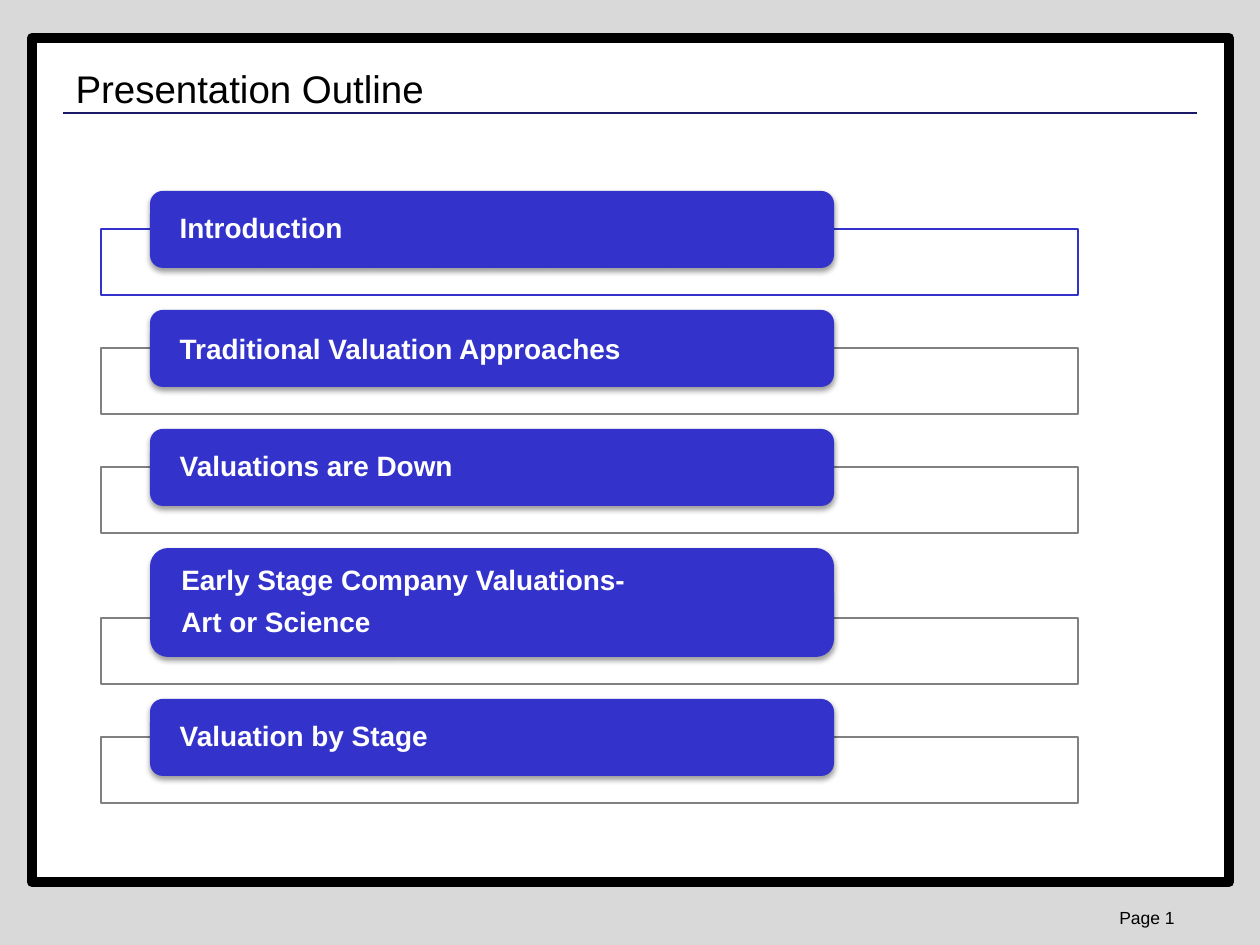
from dataclasses import dataclass

import pptx
import pptx.dml.color
import pptx.enum.shapes
import pptx.enum.text
import pptx.oxml.ns
import pptx.util
from lxml import etree

EMU_PER_PX = 914400 / 126
COLORS = {
    "background": "D9D9D9",
    "paper": "FFFFFF",
    "ink": "000000",
    "rule": "191966",
    "accent": "3333CC",
    "muted": "808080",
}
FONT = "Arial"
MIDDLE = pptx.enum.text.MSO_ANCHOR.MIDDLE
LEFT = pptx.enum.text.PP_ALIGN.LEFT
RIGHT = pptx.enum.text.PP_ALIGN.RIGHT
SHAPES = pptx.enum.shapes.MSO_SHAPE
qn = pptx.oxml.ns.qn

FIRST_TAB_TOP = 191
TAB_LEFT, TAB_WIDTH = 150, 684
OUTLINE_LEFT, OUTLINE_WIDTH, OUTLINE_HEIGHT = 101, 977, 66
OVERLAP = 39
ROW_GAP = 15


@dataclass(frozen=True)
class Topic:
    lines: tuple[str, ...]
    tab_height: int = 77
    outline: str = "muted"
    line_spacing: float = 0.9


TOPICS = (
    Topic(("Introduction",), outline="accent"),
    Topic(("Traditional Valuation Approaches",), line_spacing=1.0),
    Topic(("Valuations are Down",)),
    Topic(("Early Stage Company Valuations-", "Art or Science"), tab_height=109),
    Topic(("Valuation by Stage",)),
)


def px(length: int) -> pptx.util.Emu:
    return pptx.util.Emu(round(length * EMU_PER_PX))


def rgb(name: str) -> pptx.dml.color.RGBColor:
    return pptx.dml.color.RGBColor.from_string(COLORS[name])


def set_attributes(target, values: dict) -> None:
    for name, value in values.items():
        setattr(target, name, value)


def set_font(font, size: int, color: str, bold: bool = False) -> None:
    set_attributes(font, {"name": FONT, "size": pptx.util.Pt(size), "bold": bold})
    font.color.rgb = rgb(color)


def add_box(slide, preset, left: int, top: int, width: int, height: int, fill: str):
    box = slide.shapes.add_shape(preset, px(left), px(top), px(width), px(height))
    box.shadow.inherit = False
    box.fill.solid()
    box.fill.fore_color.rgb = rgb(fill)
    return box


def set_line(line, color: str, width: float) -> None:
    line.color.rgb = rgb(color)
    line.width = pptx.util.Pt(width)


def add_drop_shadow(shape) -> None:
    effects = shape._element.spPr.find(qn("a:effectLst"))
    shadow = etree.SubElement(effects, qn("a:outerShdw"), blurRad="40000",
                              dist="20000", dir="5400000", rotWithShape="0")
    color = etree.SubElement(shadow, qn("a:srgbClr"), val=COLORS["ink"])
    etree.SubElement(color, qn("a:alpha"), val="38000")


def add_topic(slide, topic: Topic, tab_top: int) -> int:
    """Draw one outline row and return the top of the next tab."""
    outline_top = tab_top + topic.tab_height - OVERLAP
    outline = add_box(slide, SHAPES.RECTANGLE, OUTLINE_LEFT, outline_top,
                      OUTLINE_WIDTH, OUTLINE_HEIGHT, "paper")
    set_line(outline.line, topic.outline, 0.75)
    paper = outline._element.spPr.find(f"{qn('a:solidFill')}/{qn('a:srgbClr')}")
    etree.SubElement(paper, qn("a:alpha"), val="90000")

    tab = add_box(slide, SHAPES.ROUNDED_RECTANGLE, TAB_LEFT, tab_top,
                  TAB_WIDTH, topic.tab_height, "accent")
    tab.line.fill.background()
    add_drop_shadow(tab)
    frame = tab.text_frame
    set_attributes(frame, {
        "word_wrap": True, "vertical_anchor": MIDDLE,
        "margin_left": px(26), "margin_right": px(26),
        "margin_top": 0, "margin_bottom": 0,
    })
    for index, text in enumerate(topic.lines):
        paragraph = frame.add_paragraph() if index else frame.paragraphs[0]
        paragraph.text = text
        set_attributes(paragraph, {"alignment": LEFT, "line_spacing": topic.line_spacing})
        if index:
            paragraph.space_before = pptx.util.Pt(6.4)
        set_font(paragraph.runs[0].font, 16, "paper", bold=True)
    return outline_top + OUTLINE_HEIGHT + ROW_GAP


def add_page_frame(slide) -> None:
    slide.background.fill.solid()
    slide.background.fill.fore_color.rgb = rgb("background")
    page = add_box(slide, SHAPES.RECTANGLE, 32, 38, 1197, 844, "paper")
    set_line(page.line, "ink", 6)
    etree.SubElement(page.line._get_or_add_ln(), qn("a:round"))

    rule = slide.shapes.add_connector(
        pptx.enum.shapes.MSO_CONNECTOR.STRAIGHT, px(63), px(113), px(1197), px(113))
    set_line(rule.line, "rule", 1)
    etree.SubElement(rule._element.spPr, qn("a:effectLst"))


def add_page_number(slide) -> None:
    footer = slide.shapes.add_textbox(px(1041), px(901), px(146), px(34))
    footer.text_frame.word_wrap = True
    paragraph = footer.text_frame.paragraphs[0]
    paragraph.alignment = RIGHT
    label = paragraph.add_run()
    label.text = "Page 1"
    set_font(label.font, 10, "ink")


def format_title(slide) -> None:
    title = slide.shapes.title
    set_attributes(title, {"left": px(63), "top": px(57), "width": px(1134), "height": px(63)})
    frame = title.text_frame
    frame.text = "Presentation Outline"
    set_attributes(frame, {
        "word_wrap": True, "vertical_anchor": MIDDLE,
        "auto_size": pptx.enum.text.MSO_AUTO_SIZE.NONE,
    })
    frame.paragraphs[0].alignment = LEFT
    set_font(frame.paragraphs[0].runs[0].font, 22, "ink")
    # The title sits in front of the page frame.
    slide.shapes._spTree.append(title._element)


def main() -> None:
    deck = pptx.Presentation()
    deck.slide_width, deck.slide_height = px(1260), px(945)
    slide = deck.slides.add_slide(deck.slide_layouts.get_by_name("Title Only"))
    add_page_frame(slide)
    add_page_number(slide)
    tab_top = FIRST_TAB_TOP
    for topic in TOPICS:
        tab_top = add_topic(slide, topic, tab_top)
    format_title(slide)
    deck.save("out.pptx")


if __name__ == "__main__":
    main()
